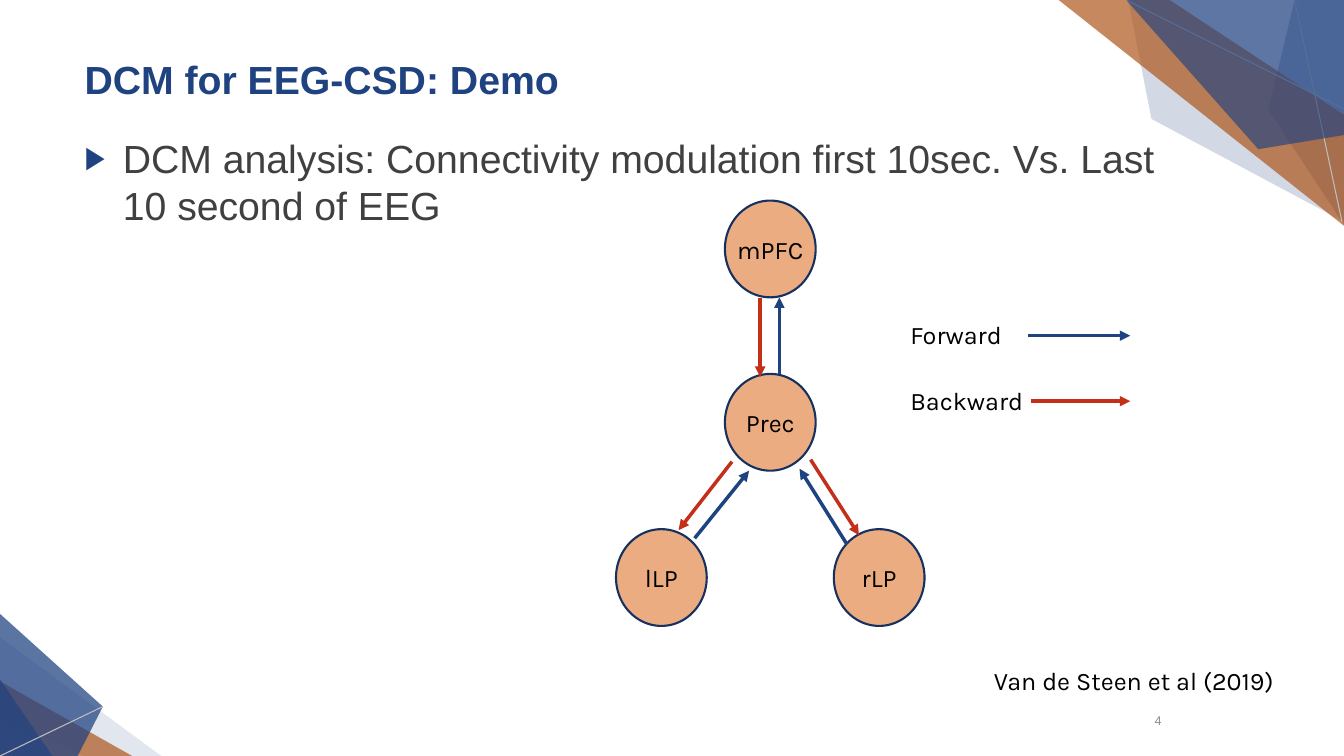
from dataclasses import dataclass

from lxml.etree import SubElement
from pptx import Presentation
from pptx.dml.color import RGBColor
from pptx.enum.shapes import MSO_CONNECTOR, MSO_SHAPE
from pptx.enum.text import MSO_ANCHOR, PP_ALIGN
from pptx.oxml.ns import qn
from pptx.util import Inches, Pt


@dataclass(frozen=True)
class Theme:
    blue: str = "1F4281"
    brown: str = "AD561C"
    pale: str = "D3D9E6"
    hairline: str = "BFBFBF"
    body: str = "404040"
    muted: str = "8C8C8C"
    black: str = "000000"
    node: str = "EBAC82"
    node_border: str = "17315F"
    red: str = "C42F1A"
    main_font: str = "Arial"
    label_font: str = "Karla"
    heading_size: int = 28
    label_size: int = 18
    number_size: int = 9


THEME = Theme()
WIDTH, HEIGHT = 13.33, 7.5
NODE_WIDTH, NODE_HEIGHT = 0.9, 0.96

# Corner decoration: points, colour, opacity in percent
FACETS = [
    ([(12.84, 0), (13.33, 0), (13.33, 2.23), (12.58, 1.09)], THEME.blue, 30),
    ([(11.42, 1.18), (11.19, 0), (13.33, 0), (13.33, 2.2)], THEME.blue, 20),
    ([(0, 7.11), (0, 6.32), (1.6, 7.5), (0.83, 7.5)], THEME.pale, 64),
    ([(0, 7.5), (0, 6.76), (1.31, 7.5)], THEME.brown, 70),
    ([(0, 7.5), (0, 6.09), (1.02, 7.01), (0.77, 7.5)], THEME.blue, 73),
    ([(0, 7.5), (0, 6.74), (0.52, 7.5)], THEME.blue, 65),
    ([(13.33, 1.14), (13.33, 2.24), (10.5, 0), (11.6, 0)], THEME.brown, 70),
]
TOP_FACET = ([(12.48, 1.48), (11.17, 0), (13.33, 0), (13.33, 1.34)], THEME.blue, 65)
HAIRLINES = [
    ((13.33, 1.08), (11.17, 0)),
    ((13.31, 2.2), (12.84, 0)),
    ((0, 7.5), (1.02, 7.01)),
]

# Brain regions by left and top, then the links between them
NODES = {
    "lLP": (6.11, 5.25),
    "rLP": (8.27, 5.25),
    "Prec": (7.19, 3.71),
    "mPFC": (7.19, 1.99),
}
FORWARD_LINKS = [
    ((6.89, 5.34), (7.43, 4.67)),
    ((8.4, 5.4), (7.93, 4.65)),
    ((7.73, 3.71), (7.73, 2.95)),
]
BACKWARD_LINKS = [
    ((7.26, 4.58), (6.73, 5.26)),
    ((8.04, 4.56), (8.52, 5.31)),
    ((7.54, 2.96), (7.54, 3.74)),
]
# Legend: label, label top, arrow start, arrow height, colour
LEGEND = [
    ("Forward", 3.12, 10.2, 3.33, THEME.blue),
    ("Backward", 3.77, 10.23, 3.98, THEME.red),
]


def color(value):
    return RGBColor.from_string(value)


def style_text(paragraph, text, size, value, font=THEME.label_font,
               bold=False, align=PP_ALIGN.LEFT):
    paragraph.text = text
    paragraph.alignment = align
    paragraph.font.name = font
    paragraph.font.size = Pt(size)
    paragraph.font.bold = bold
    paragraph.font.color.rgb = color(value)


def add_text(slide, box, text, size, value, anchor=MSO_ANCHOR.TOP, bullet=False, **style):
    frame = slide.shapes.add_textbox(*map(Inches, box)).text_frame
    frame.word_wrap = True
    frame.vertical_anchor = anchor
    paragraph = frame.paragraphs[0]
    if bullet:
        add_bullet(paragraph)
    style_text(paragraph, text, size, value, **style)


def add_bullet(paragraph):
    properties = paragraph._p.get_or_add_pPr()
    properties.set("marL", str(Inches(0.38)))
    properties.set("indent", str(Inches(-0.38)))
    bullet_color = SubElement(properties, qn("a:buClr"))
    SubElement(bullet_color, qn("a:srgbClr"), val=THEME.blue)
    SubElement(properties, qn("a:buSzPct"), val="80000")
    SubElement(properties, qn("a:buFont"), typeface=THEME.main_font)
    SubElement(properties, qn("a:buChar"), char="▶")


def add_facet(slide, points, value, opacity):
    corners = [(Inches(x), Inches(y)) for x, y in points]
    builder = slide.shapes.build_freeform(*corners[0])
    builder.add_line_segments(corners[1:], close=True)
    shape = builder.convert_to_shape()
    shape.shadow.inherit = False
    shape.fill.solid()
    shape.fill.fore_color.rgb = color(value)
    shape.line.fill.background()
    rgb = shape._element.spPr.find(qn("a:solidFill")).find(qn("a:srgbClr"))
    SubElement(rgb, qn("a:alpha"), val=str(opacity * 1000))


def add_line(slide, start, end, value, width, arrow=False):
    connector = slide.shapes.add_connector(
        MSO_CONNECTOR.STRAIGHT, *map(Inches, (*start, *end)))
    connector.line.color.rgb = color(value)
    connector.line.width = Pt(width)
    if arrow:
        SubElement(connector.line._get_or_add_ln(), qn("a:tailEnd"), type="triangle")
    SubElement(connector._element.spPr, qn("a:effectLst"))


def add_node(slide, name, left, top):
    shape = slide.shapes.add_shape(
        MSO_SHAPE.OVAL, *map(Inches, (left, top, NODE_WIDTH, NODE_HEIGHT)))
    shape.shadow.inherit = False
    shape.fill.solid()
    shape.fill.fore_color.rgb = color(THEME.node)
    shape.line.color.rgb = color(THEME.node_border)
    shape.line.width = Pt(1.5)
    frame = shape.text_frame
    frame.word_wrap = False
    frame.vertical_anchor = MSO_ANCHOR.MIDDLE
    frame.margin_left = frame.margin_right = 0
    style_text(frame.paragraphs[0], name, THEME.label_size, THEME.black,
               align=PP_ALIGN.CENTER)


def main():
    presentation = Presentation()
    presentation.slide_width = Inches(WIDTH)
    presentation.slide_height = Inches(HEIGHT)
    slide = presentation.slides.add_slide(presentation.slide_layouts[6])

    # Corner decoration
    for facet in FACETS:
        add_facet(slide, *facet)
    for start, end in HAIRLINES:
        add_line(slide, start, end, THEME.hairline, 0.75)
    add_facet(slide, *TOP_FACET)

    # Title, body, page number and citation
    add_text(slide, (0.74, 1.28, 10.87, 5.45),
             "DCM analysis: Connectivity modulation first 10sec. Vs. Last 10 second of EEG",
             THEME.heading_size, THEME.body, bullet=True, font=THEME.main_font)
    add_text(slide, (10.8, 6.95, 0.82, 0.4), "4", THEME.number_size, THEME.muted,
             anchor=MSO_ANCHOR.MIDDLE, font=THEME.main_font, align=PP_ALIGN.RIGHT)
    add_text(slide, (0.74, 0.41, 10.88, 0.65), "DCM for EEG-CSD: Demo",
             THEME.heading_size, THEME.blue, anchor=MSO_ANCHOR.BOTTOM,
             font=THEME.main_font, bold=True)
    add_text(slide, (9.76, 6.55, 3.5, 0.4), "Van de Steen et al (2019)",
             THEME.label_size, THEME.black)

    # Connectivity diagram
    for name, (left, top) in NODES.items():
        add_node(slide, name, left, top)
    for links, value in ((FORWARD_LINKS, THEME.blue), (BACKWARD_LINKS, THEME.red)):
        for start, end in links:
            add_line(slide, start, end, value, 2.5, arrow=True)

    # Legend
    for label, top, arrow_left, arrow_top, value in LEGEND:
        add_line(slide, (arrow_left, arrow_top), (11.21, arrow_top), value, 2.5, arrow=True)
        add_text(slide, (8.93, top, 1.68, 0.4), label, THEME.label_size, THEME.black)

    presentation.save("out.pptx")


if __name__ == "__main__":
    main()
